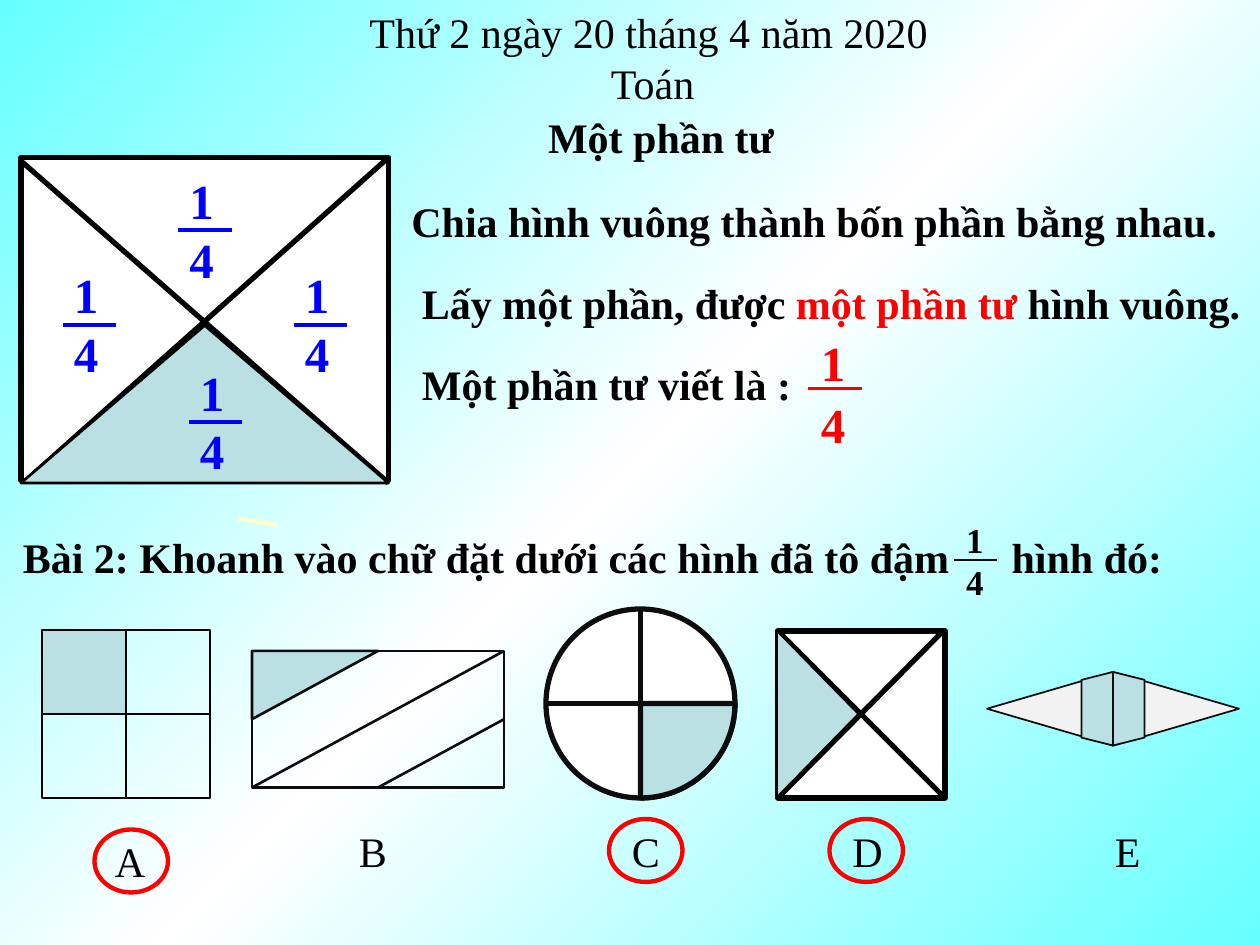
from copy import deepcopy

from lxml import etree
from pptx import Presentation
from pptx import util as u
from pptx.dml.color import RGBColor
from pptx.enum import shapes, text
from pptx.oxml.ns import qn

Pt = u.Pt
KIND = shapes.MSO_SHAPE
FONT = "Times New Roman"
COLORS = {
    "aqua": "66FFFF", "white": "FFFFFF", "black": "000000", "ink": "0D0D0D",
    "red": "FF0000", "blue": "0000FF", "cream": "FFFFCC",
    "shade": "BBE0E3", "grey": "F2F2F2",
}


def rgb(name):
    return RGBColor.from_string(COLORS[name])


def write(shape, words, size=24, color="black", bold=False, wrap=False,
          align=text.PP_ALIGN.LEFT, anchor=text.MSO_ANCHOR.TOP):
    frame = shape.text_frame
    frame.text = words
    frame.word_wrap = wrap
    frame.auto_size = text.MSO_AUTO_SIZE.NONE
    frame.vertical_anchor = anchor
    for paragraph in frame.paragraphs:
        paragraph.alignment = align
        for run in paragraph.runs:
            run.font.name, run.font.size, run.font.bold = FONT, Pt(size), bold
            run.font.color.rgb = rgb(color)


presentation = Presentation()
presentation.slide_width, presentation.slide_height = Pt(720), Pt(540)
slide = presentation.slides.add_slide(presentation.slide_layouts[5])

# Background: diagonal aqua, white, aqua
background = slide.background.fill
background.gradient()
background.gradient_angle = 315
stop_list = slide.element.find(".//" + qn("a:gsLst"))
stop_list.insert(1, deepcopy(stop_list[0]))
for stop, position, color in zip(background.gradient_stops, (0, 0.5, 1),
                                 ("aqua", "white", "aqua")):
    stop.position = position
    stop.color.rgb = rgb(color)

# Title
title = slide.shapes.title
title.left, title.top, title.width, title.height = Pt(306), Pt(60), Pt(145), Pt(36)
write(title, "Một phần tư", bold=True)

# Lesson text: words, left, top, width, bold, wrap
sentences = [
    ("Thứ 2 ngày 20 tháng 4 năm 2020", 204, 0, 336, False, False),
    ("Toán", 342, 29.5, 63, False, False),
    ("Chia hình vuông thành bốn phần bằng nhau.", 228, 108, 480, True, True),
    ("Lấy một phần, được ", 234, 155, 516, True, True),
    ("Một phần tư viết là :", 234, 201.5, 228, True, True),
    ("Bài 2: Khoanh vào chữ đặt dưới các hình đã tô đậm", 6, 300, 560, True, True),
    ("hình đó:", 571, 300, 113, True, True),
]
for words, left, top, width, bold, wrap in sentences:
    box = slide.shapes.add_textbox(Pt(left), Pt(top), Pt(width), Pt(36))
    write(box, words, bold=bold, wrap=wrap)
    if words.startswith("Lấy"):
        for extra, color in (("một phần tư ", "red"), ("hình vuông.", "black")):
            run = box.text_frame.paragraphs[0].add_run()
            run.text = extra
            run.font.name, run.font.size, run.font.bold = FONT, Pt(24), True
            run.font.color.rgb = rgb(color)

# Figures, back to front: kind (None is a line), left, top, width, height,
# rotation, fill, line colour, line width
figures = [
    # Large square in four parts
    (KIND.RECTANGLE, 12, 90, 210, 184.5, 0, "white", "black", 3),
    (None, 12, 92, 210, 184, 0, None, "black", 3),
    (None, 222, 90, -207, 184.5, 0, None, "black", 3),
    (KIND.ISOSCELES_TRIANGLE, 12, 186, 210, 90, 0, "shade", "black", 1.5),
    (None, 136, 296.5, 22.5, 3.5, 0, None, "cream", 2.5),
    # B: rectangle with slanted cuts
    (KIND.RECTANGLE, 144, 372, 144, 78, 0, None, "ink", 1.5),
    (KIND.RIGHT_TRIANGLE, 160.5, 355.5, 39, 72, 90, "shade", "ink", 1.5),
    (None, 144, 450, 144, -78, 0, None, "ink", 1.5),
    (None, 216, 450, 72, -39, 0, None, "ink", 1.5),
    # C: circle in quarters
    (KIND.FLOWCHART_OR, 312, 348, 108, 108, 0, "white", "ink", 3),
    (KIND.PIE, 312, 348, 108, 108, 0, "shade", "ink", 3),
    # D: square with diagonals
    (KIND.RECTANGLE, 444.5, 360.5, 95.5, 95.5, 0, "white", "black", 3),
    (None, 539.5, 360, -95, 96, 0, None, "black", 3),
    (None, 540, 456, -95, -95, 0, None, "black", 3),
    (KIND.ISOSCELES_TRIANGLE, 419.25, 384.5, 96, 47, 90, "shade", "black", 1.5),
    # E: spindle
    (KIND.ISOSCELES_TRIANGLE, 651, 369, 42, 72, 90, "grey", "ink", 1),
    (KIND.ISOSCELES_TRIANGLE, 579, 369, 42, 72, 270, "grey", "ink", 1),
    (KIND.TRAPEZOID, 624, 396, 42, 18, 90, "shade", "ink", 1),
    (KIND.TRAPEZOID, 606, 396, 42, 18, 270, "shade", "ink", 1),
]
# A: grid of four squares, the first shaded
for column in range(2):
    for row in range(2):
        fill = "shade" if column == row == 0 else None
        figures.append((KIND.RECTANGLE, 24 + 48 * column, 360 + 48 * row,
                        48, 48, 0, fill, "black", 1.5))
# Rings around the right answers
for left, top in ((54, 474), (348, 468), (474, 468)):
    figures.append((KIND.OVAL, left, top, 42, 36, 0, None, "red", 2.5))
# Fraction bars
quarters = [(102, 106.5), (36, 160.5), (168, 160.5), (108, 216)]
for left, top in quarters:
    figures.append((None, left, top + 25, 30.5, 0, 0, None, "blue", 2.25))
figures += [(None, 462, 222, 30.5, 0, 0, None, "red", 2.25),
            (None, 545, 320, 25, 0, 0, None, "ink", 1.5)]

for kind, left, top, width, height, rotation, fill, color, weight in figures:
    if kind is None:
        shape = slide.shapes.add_connector(
            shapes.MSO_CONNECTOR.STRAIGHT, Pt(left), Pt(top),
            Pt(left + width), Pt(top + height))
        etree.SubElement(shape._element.spPr, qn("a:effectLst"))
    else:
        shape = slide.shapes.add_shape(kind, Pt(left), Pt(top), Pt(width), Pt(height))
        shape.shadow.inherit = False
        shape.rotation = rotation
        if fill:
            shape.fill.solid()
            shape.fill.fore_color.rgb = rgb(fill)
        else:
            shape.fill.background()
        if kind == KIND.PIE:
            shape.adjustments[0], shape.adjustments[1] = 0, 54
    shape.line.color.rgb = rgb(color)
    shape.line.width = Pt(weight)

# Fractions in the large square
for left, top in quarters:
    box = slide.shapes.add_textbox(Pt(left), Pt(top), Pt(26.5), Pt(49))
    write(box, "1\n4", 28, "blue", True, align=text.PP_ALIGN.CENTER,
          anchor=text.MSO_ANCHOR.MIDDLE)

# Red fraction and the fraction in the exercise
for digit, top in (("1", 186.5), ("4", 222)):
    box = slide.shapes.add_textbox(Pt(462), Pt(top), Pt(30), Pt(41))
    write(box, digit, 28, "red", True, wrap=True)
box = slide.shapes.add_textbox(Pt(545), Pt(292.5), Pt(24.5), Pt(55.5))
write(box, "1\n4", 20, bold=True)

# Answer letters
for letter, left, top in (("A", 58.5, 474), ("B", 198, 468), ("C", 354, 468),
                          ("D", 480, 468), ("E", 630, 468)):
    box = slide.shapes.add_textbox(Pt(left), Pt(top), Pt(32), Pt(36))
    write(box, letter, wrap=True)

presentation.save("out.pptx")
